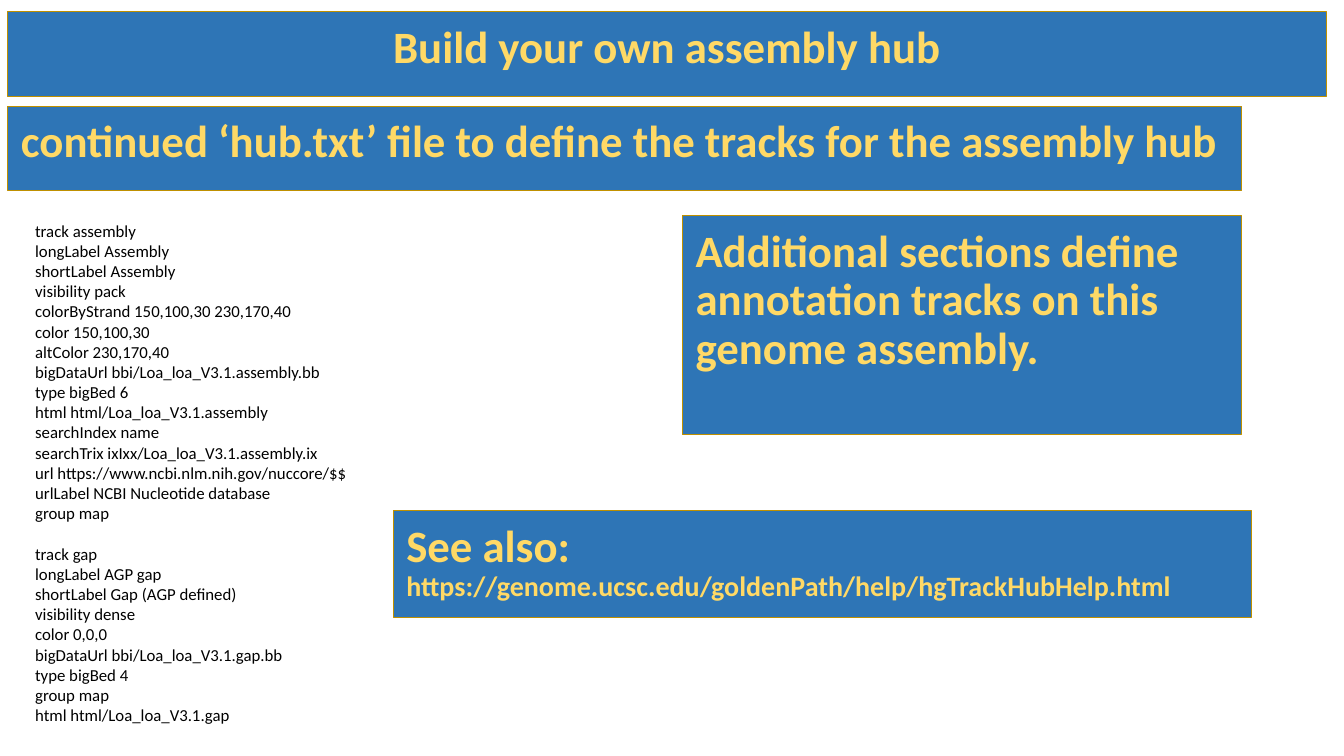
from pptx import Presentation
from pptx import util as u
from pptx.dml.color import RGBColor
from pptx.enum import shapes, text

COLORS = {"panel": "2E75B6", "border": "BF9000", "heading": "FFD966", "code": "000000"}

TRACKS = [
    """track assembly
longLabel Assembly
shortLabel Assembly
visibility pack
colorByStrand 150,100,30 230,170,40
color 150,100,30
altColor 230,170,40
bigDataUrl bbi/Loa_loa_V3.1.assembly.bb
type bigBed 6
html html/Loa_loa_V3.1.assembly
searchIndex name
searchTrix ixIxx/Loa_loa_V3.1.assembly.ix
url https://www.ncbi.nlm.nih.gov/nuccore/$$
urlLabel NCBI Nucleotide database
group map""",
    """track gap
longLabel AGP gap
shortLabel Gap (AGP defined)
visibility dense
color 0,0,0
bigDataUrl bbi/Loa_loa_V3.1.gap.bb
type bigBed 4
group map
html html/Loa_loa_V3.1.gap""",
]


def rgb(name):
    return RGBColor.from_string(COLORS[name])


def add_run(p, content, size=32, color="heading", bold=True, font="Calibri"):
    r = p.add_run()
    r.text = content
    r.font.name, r.font.size, r.font.bold = font, u.Pt(size), bold
    r.font.color.rgb = rgb(color)


class HubSlide:
    inset = 9.4
    code_size = 12
    code_line = 14.65

    def __init__(self, prs):
        self.s = prs.slides.add_slide(prs.slide_layouts[5])

    def title(self, box, content):
        sp = self.s.shapes.title
        sp.left, sp.top, sp.width, sp.height = map(u.Pt, box)
        self.style_panel(sp, [(content, 32)], text.PP_ALIGN.CENTER)

    def panel(self, box, *runs):
        sp = self.s.shapes.add_shape(shapes.MSO_SHAPE.RECTANGLE, *map(u.Pt, box))
        sp.shadow.inherit = False
        self.style_panel(sp, runs)

    def style_panel(self, sp, runs, align=text.PP_ALIGN.LEFT):
        """Format a title or rectangle as a blue panel and write (text, size) runs."""
        sp.fill.solid()
        sp.fill.fore_color.rgb = rgb("panel")
        sp.line.color.rgb = rgb("border")
        sp.line.width = u.Pt(0.75)
        tf = sp.text_frame
        tf.word_wrap = True
        tf.auto_size = text.MSO_AUTO_SIZE.NONE
        tf.vertical_anchor = text.MSO_ANCHOR.TOP
        tf.margin_left = tf.margin_right = u.Pt(self.inset)
        tf.margin_top = tf.margin_bottom = u.Pt(self.inset)
        p = tf.paragraphs[0]
        p.alignment = align
        p.line_spacing = 0.9
        p.space_before, p.space_after = u.Pt(0), u.Pt(21.3)
        for content, size in runs:
            add_run(p, content, size)

    def code(self, box, blocks):
        """Write one paragraph per line, with a one-line gap between blocks."""
        tf = self.s.shapes.add_textbox(*map(u.Pt, box)).text_frame
        tf.word_wrap = False
        tf.auto_size = text.MSO_AUTO_SIZE.SHAPE_TO_FIT_TEXT
        for b, block in enumerate(blocks):
            for i, line in enumerate(block.splitlines()):
                first = b == i == 0
                p = tf.paragraphs[0] if first else tf.add_paragraph()
                if b and i == 0:
                    p.space_before = u.Pt(self.code_line)
                add_run(p, line, self.code_size, "code", False)


def main():
    prs = Presentation()
    prs.slide_width, prs.slide_height = u.Pt(960), u.Pt(540)
    hub = HubSlide(prs)
    hub.title((5.5, 8.5, 942, 60.5), "Build your own assembly hub")
    hub.panel((5.5, 75.8, 881.5, 60.5),
              ("continued ‘hub.txt’ file to define the tracks for the assembly hub", 32))
    hub.code((18, 154, 239, 385), TRACKS)
    hub.panel((487.5, 154, 399, 156.5),
              ("Additional sections define annotation tracks on this genome assembly.", 32))
    hub.panel((280.8, 364.8, 613, 76.3),
              ("See also: ", 32),
              ("https://genome.ucsc.edu/goldenPath/help/hgTrackHubHelp.html", 20))
    prs.save("out.pptx")


if __name__ == "__main__":
    main()
